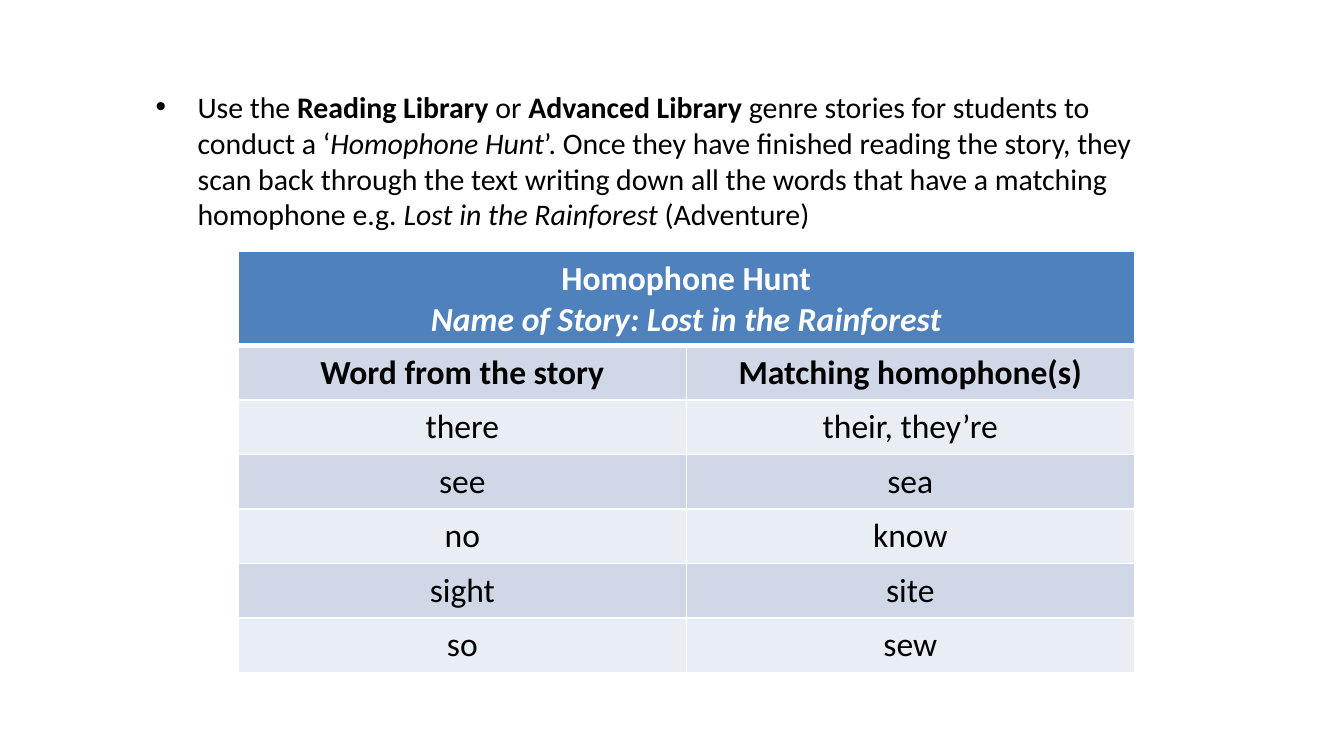
from lxml.etree import SubElement
from pptx import Presentation
from pptx.dml.color import RGBColor
from pptx.enum.text import MSO_AUTO_SIZE, PP_ALIGN
from pptx.oxml.ns import qn
from pptx.util import Pt

FONT = "Calibri"
BLACK = RGBColor(0x00, 0x00, 0x00)
WHITE = RGBColor(0xFF, 0xFF, 0xFF)
HEADER_BLUE = RGBColor(0x4F, 0x81, 0xBD)
BAND_DARK = RGBColor(0xD0, 0xD8, 0xE8)
BAND_LIGHT = RGBColor(0xE9, 0xED, 0xF4)

# Each run: text, bold, italic
INSTRUCTION = [
    ("Use the ", False, False),
    ("Reading Library", True, False),
    (" or ", False, False),
    ("Advanced Library", True, False),
    (" genre stories for students to conduct a ‘", False, False),
    ("Homophone Hunt", False, True),
    ("’. Once they have finished reading the story, they scan back through "
     "the text writing down all the words that have a matching homophone e.g. ",
     False, False),
    ("Lost in the Rainforest", False, True),
    (" (Adventure)", False, False),
]
TABLE_TITLE = ["Homophone Hunt", "Name of Story: Lost in the Rainforest"]
WORD_PAIRS = [
    ("Word from the story", "Matching homophone(s)"),
    ("there", "their, they’re"),
    ("see", "sea"),
    ("no", "know"),
    ("sight", "site"),
    ("so", "sew"),
]
HEADER_HEIGHT = Pt(50)
ROW_HEIGHT = Pt(29.2)


def style_font(font, size, color):
    font.name = FONT
    font.size = Pt(size)
    font.color.rgb = color


def add_bullet(paragraph, indent):
    properties = paragraph._p.get_or_add_pPr()
    properties.set("marL", str(indent))
    properties.set("indent", str(-indent))
    SubElement(properties, qn("a:buFont"), typeface="Arial")
    SubElement(properties, qn("a:buChar"), char="•")


def add_instruction(slide):
    box = slide.shapes.add_textbox(Pt(76.3), Pt(43.9), Pt(566.6), Pt(85))
    frame = box.text_frame
    frame.word_wrap = True
    frame.auto_size = MSO_AUTO_SIZE.SHAPE_TO_FIT_TEXT
    paragraph = frame.paragraphs[0]
    add_bullet(paragraph, Pt(22.5))
    style_font(paragraph.font, 16, BLACK)
    for text, bold, italic in INSTRUCTION:
        run = paragraph.add_run()
        run.text = text
        run.font.bold = bold
        run.font.italic = italic


def set_borders(cell, top=1, bottom=1):
    properties = cell._tc.get_or_add_tcPr()
    for side, width in (("L", 1), ("R", 1), ("T", top), ("B", bottom)):
        line = SubElement(properties, qn(f"a:ln{side}"), w=str(Pt(width)))
        fill = SubElement(line, qn("a:solidFill"))
        SubElement(fill, qn("a:srgbClr"), val=str(WHITE))


def fill_cell(cell, lines, background, color, bold, top=1, bottom=1):
    set_borders(cell, top, bottom)
    cell.fill.solid()
    cell.fill.fore_color.rgb = background
    cell.text = "\n".join(lines)
    for paragraph in cell.text_frame.paragraphs:
        paragraph.alignment = PP_ALIGN.CENTER
        style_font(paragraph.font, 18, color)
        paragraph.font.bold = bold


def add_homophone_table(slide):
    row_count = len(WORD_PAIRS) + 1
    height = HEADER_HEIGHT + ROW_HEIGHT * len(WORD_PAIRS)
    table = slide.shapes.add_table(
        row_count, 2, Pt(127.7), Pt(134.7), Pt(480), height).table
    table.first_row = False
    table.horz_banding = False
    table.rows[0].height = HEADER_HEIGHT

    # Merged heading across both columns
    heading = table.cell(0, 0)
    heading.merge(table.cell(0, 1))
    fill_cell(heading, TABLE_TITLE, HEADER_BLUE, WHITE, True, bottom=3)
    set_borders(table.cell(0, 1), bottom=3)
    heading.text_frame.paragraphs[1].font.italic = True

    # Banded word pairs, led by the bold column names
    for row, pair in enumerate(WORD_PAIRS, start=1):
        table.rows[row].height = ROW_HEIGHT
        first = row == 1
        band = BAND_DARK if row % 2 else BAND_LIGHT
        for column, word in enumerate(pair):
            fill_cell(table.cell(row, column), [word], band, BLACK, first,
                      top=3 if first else 1)


def main():
    presentation = Presentation()
    presentation.slide_width = Pt(720)
    presentation.slide_height = Pt(405)
    slide = presentation.slides.add_slide(presentation.slide_layouts[6])
    add_instruction(slide)
    add_homophone_table(slide)
    presentation.save("out.pptx")


if __name__ == "__main__":
    main()
